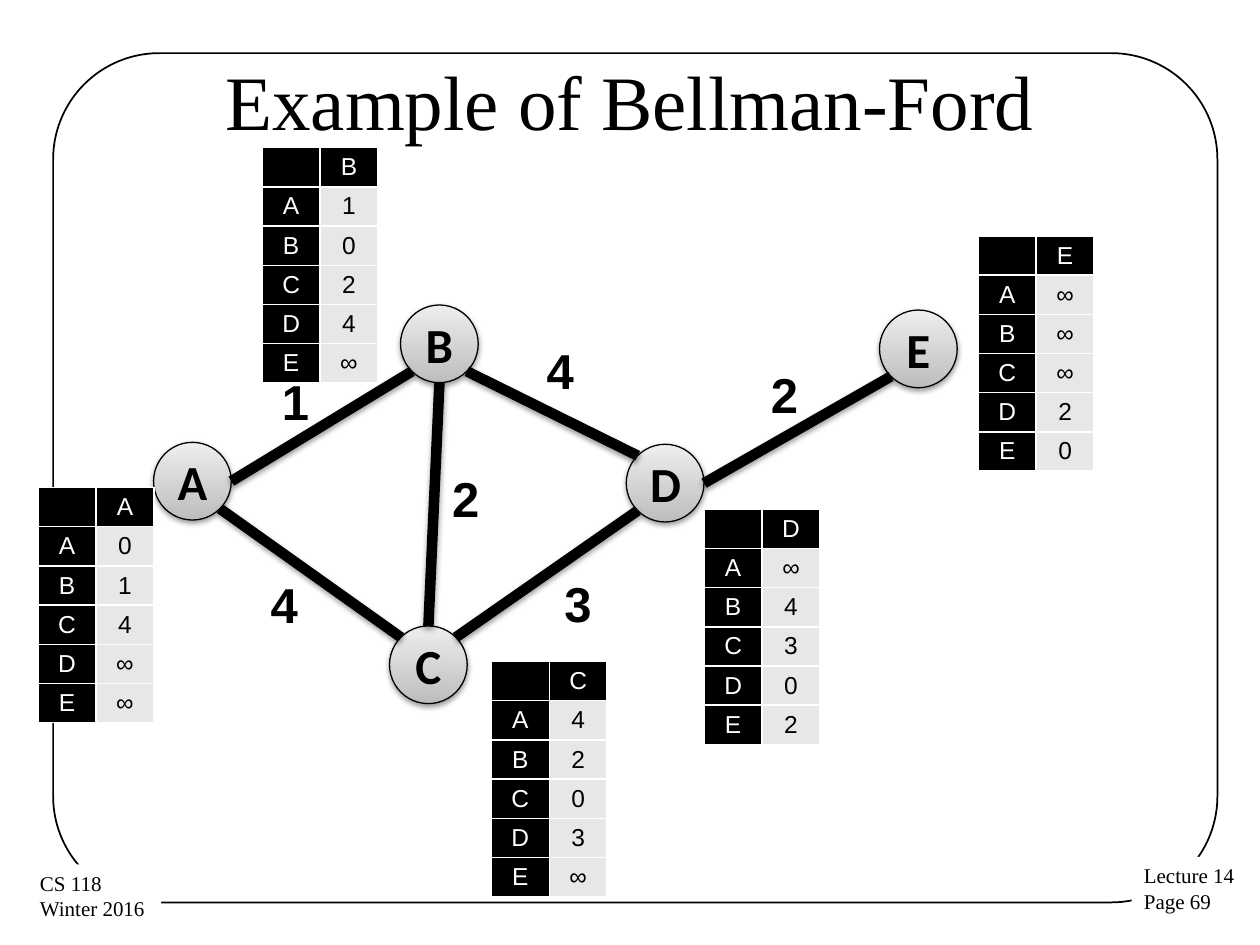
import math

from lxml import etree
from pptx import Presentation
from pptx import util as u
from pptx.dml import color
from pptx.enum import shapes, text
from pptx.oxml import ns

COLORS = {"ink": "000000", "paper": "FFFFFF", "cell": "E7E7E7",
          "node_bottom": "BDBDBD", "node_top": "EEEEEE"}
NODE_SIZE = 44.4
COLUMN_WIDTH, ROW_HEIGHT = 33.1, 22.1

# Node name: left and top of its circle
NODES = {"A": (87.8, 252.8), "B": (228.9, 174.3), "D": (357.9, 253.9),
         "E": (502.6, 177.2), "C": (222.6, 357.7)}
# Each end is a node and the angle on its circle, anticlockwise from the right
LINKS = [("D", 0, "E", 225), ("B", 270, "C", 90), ("A", 0, "B", 225),
         ("B", 315, "D", 135), ("C", 45, "D", 225), ("A", 315, "C", 135)]
COSTS = [("1", 154, 209), ("4", 147.6, 324.7), ("2", 251.3, 264.2),
         ("4", 305.3, 190.8), ("3", 315.4, 324), ("2", 433.4, 204.5)]
# Node name, left, top, and its distances to A, B, C, D, E
DISTANCES = [("E", 559, 134.8, "∞∞∞20"), ("D", 402.4, 291, "∞4302"),
             ("C", 280.8, 378, "4203∞"), ("B", 149.8, 84.4, "1024∞"),
             ("A", 21.8, 278.6, "014∞∞")]


def rgb(name):
    return color.RGBColor.from_string(COLORS[name])


def format_font(font, name, size, bold=False, ink="ink"):
    font.name, font.size, font.bold = name, u.Pt(size), bold
    font.color.rgb = rgb(ink)


def add_shadow(item):
    effects = etree.SubElement(item._element.spPr, ns.qn("a:effectLst"))
    outer = etree.SubElement(effects, ns.qn("a:outerShdw"), blurRad="40000",
                             dist="20000", dir="5400000", rotWithShape="0")
    shade = etree.SubElement(outer, ns.qn("a:srgbClr"), val=COLORS["ink"])
    etree.SubElement(shade, ns.qn("a:alpha"), val="38000")


def add_frame(page):
    frame = page.shapes.add_shape(shapes.MSO_SHAPE.ROUNDED_RECTANGLE,
                                  u.Pt(30.4), u.Pt(30.4), u.Pt(665.3), u.Pt(485.3))
    frame.adjustments[0] = 0.125
    frame.shadow.inherit = False
    frame.fill.background()
    frame.line.color.rgb = rgb("ink")
    frame.line.width = u.Pt(1)


def add_title(page, words):
    title = page.shapes.title
    title.left, title.top = u.Pt(36), u.Pt(12)
    title.width, title.height = u.Pt(648), u.Pt(90)
    title.text_frame.text = words
    title.text_frame.vertical_anchor = text.MSO_ANCHOR.MIDDLE
    para = title.text_frame.paragraphs[0]
    para.alignment = text.PP_ALIGN.CENTER
    format_font(para.font, "Times New Roman", 44)


def add_label(page, words, left, top, width, height, font, size, bold=False):
    box = page.shapes.add_textbox(u.Pt(left), u.Pt(top), u.Pt(width), u.Pt(height))
    box.text_frame.text = words
    box.text_frame.word_wrap = False
    box.text_frame.auto_size = text.MSO_AUTO_SIZE.SHAPE_TO_FIT_TEXT
    for para in box.text_frame.paragraphs:
        format_font(para.font, font, size, bold)
    return box


def add_footer(page, words, left, top, width):
    box = add_label(page, words, left, top, width, 36.7, "Times New Roman", 12)
    box.fill.solid()
    box.fill.fore_color.rgb = rgb("paper")


def add_node(page, name, left, top):
    node = page.shapes.add_shape(shapes.MSO_SHAPE.OVAL, u.Pt(left), u.Pt(top),
                                 u.Pt(NODE_SIZE), u.Pt(NODE_SIZE))
    node.fill.gradient()
    node.fill.gradient_angle = 90
    for stop, shade in zip(node.fill.gradient_stops, ("node_bottom", "node_top")):
        stop.color.rgb = rgb(shade)
    node.line.color.rgb = rgb("ink")
    node.line.width = u.Pt(0.75)
    add_shadow(node)
    node.text_frame.text = name
    node.text_frame.vertical_anchor = text.MSO_ANCHOR.MIDDLE
    para = node.text_frame.paragraphs[0]
    para.alignment = text.PP_ALIGN.CENTER
    format_font(para.font, "Calibri", 28, True)


def rim_point(name, degrees):
    left, top = NODES[name]
    radius, angle = NODE_SIZE / 2, math.radians(degrees)
    return (u.Pt(left + radius * (1 + math.cos(angle))),
            u.Pt(top + radius * (1 - math.sin(angle))))


def add_link(page, start, start_angle, end, end_angle):
    link = page.shapes.add_connector(shapes.MSO_CONNECTOR.STRAIGHT,
                                     *rim_point(start, start_angle),
                                     *rim_point(end, end_angle))
    link.line.color.rgb = rgb("ink")
    link.line.width = u.Pt(6)
    add_shadow(link)


def add_borders(cell):
    properties = cell._tc.get_or_add_tcPr()
    for position, side in enumerate(("lnL", "lnR", "lnT", "lnB")):
        border = etree.Element(ns.qn(f"a:{side}"), w=str(u.Pt(1)))
        fill = etree.SubElement(border, ns.qn("a:solidFill"))
        etree.SubElement(fill, ns.qn("a:srgbClr"), val=COLORS["paper"])
        properties.insert(position, border)


def format_cell(cell, words, dark):
    cell.text = words
    cell.vertical_anchor = text.MSO_ANCHOR.MIDDLE
    cell.margin_left = cell.margin_right = u.Pt(5)
    cell.margin_top = cell.margin_bottom = u.Pt(2.8)
    cell.fill.solid()
    cell.fill.fore_color.rgb = rgb("ink" if dark else "cell")
    add_borders(cell)
    para = cell.text_frame.paragraphs[0]
    para.alignment = text.PP_ALIGN.CENTER
    format_font(para.font, "Arial", 14, ink="paper" if dark else "ink")
    if not words:  # keeps the empty corner cell from stretching its row
        etree.SubElement(para._p, ns.qn("a:endParaRPr"), sz="1400")


def add_distances(page, name, left, top, distances):
    rows = [("", name), *zip("ABCDE", distances)]
    table = page.shapes.add_table(len(rows), 2, u.Pt(left), u.Pt(top),
                                  u.Pt(2 * COLUMN_WIDTH),
                                  u.Pt(len(rows) * ROW_HEIGHT)).table
    table.horz_banding = False
    for row_index, row in enumerate(rows):
        table.rows[row_index].height = u.Pt(ROW_HEIGHT)
        for column_index, words in enumerate(row):
            dark = row_index == 0 or column_index == 0
            format_cell(table.cell(row_index, column_index), words, dark)


def main():
    deck = Presentation()
    deck.slide_width, deck.slide_height = u.Pt(720), u.Pt(540)
    page = deck.slides.add_slide(deck.slide_layouts[5])

    # Frame, footers and title
    add_frame(page)
    add_footer(page, "Lecture 14\nPage 69", 646.6, 489.6, 67)
    add_footer(page, "CS 118\nWinter 2016", 15.8, 494, 76.3)
    add_title(page, "Example of Bellman-Ford")

    # Network graph
    for name, (left, top) in NODES.items():
        add_node(page, name, left, top)
    for link in LINKS:
        add_link(page, *link)
    for cost, left, top in COSTS:
        add_label(page, cost, left, top, 30, 41.2, "Arial", 28, True)

    # Distance table of each node
    for entry in DISTANCES:
        add_distances(page, *entry)

    deck.save("out.pptx")


if __name__ == "__main__":
    main()
